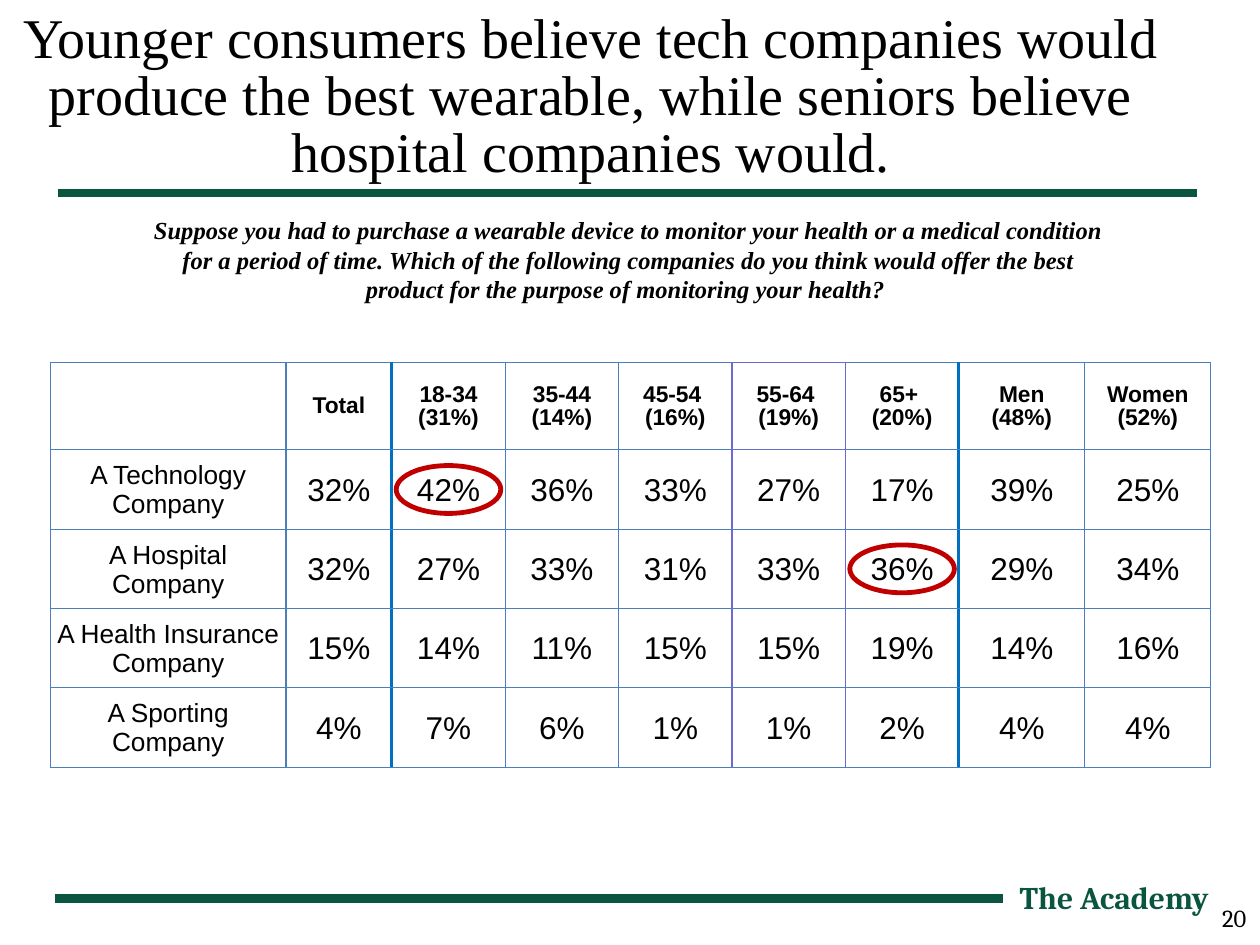
import pptx
import pptx.dml.color
import pptx.enum.shapes
import pptx.enum.text
import pptx.oxml
import pptx.oxml.ns
import pptx.util

Inches = pptx.util.Inches
Pt = pptx.util.Pt
CENTER = pptx.enum.text.PP_ALIGN.CENTER
RIGHT = pptx.enum.text.PP_ALIGN.RIGHT
GREEN, BLACK, RED = "0A5540", "000000", "C00000"
GRID_BLUE, DIVIDER_BLUE, PURPLE = "4B7EBC", "0070C0", "6B6BCF"


def color(value):
    return pptx.dml.color.RGBColor.from_string(value)


def format_text(text_frame, font_name, size, align, text_color=BLACK, bold=False, italic=False, spacing=1.0):
    text_frame.word_wrap = True
    for paragraph in text_frame.paragraphs:
        paragraph.alignment = align
        paragraph.line_spacing = spacing
        paragraph.space_before = Pt(0)
        font = paragraph.font
        font.name, font.size, font.bold, font.italic = font_name, Pt(size), bold, italic
        font.color.rgb = color(text_color)


presentation = pptx.Presentation()
presentation.slide_width = Inches(10)
presentation.slide_height = Inches(7.5)
slide = presentation.slides.add_slide(presentation.slide_layouts[5])
slide.background.fill.solid()
slide.background.fill.fore_color.rgb = color("FFFFFF")

title = slide.shapes.title
title.left, title.top, title.width, title.height = map(Inches, (0, 0.05, 9.38, 0.56))
title.text_frame.text = (
    "Younger consumers believe tech companies would produce the best wearable, "
    "while seniors believe hospital companies would."
)
title.text_frame.auto_size = pptx.enum.text.MSO_AUTO_SIZE.NONE
title.text_frame.vertical_anchor = pptx.enum.text.MSO_ANCHOR.TOP
format_text(title.text_frame, "Times New Roman", 32, CENTER, spacing=0.85)

question = (
    "Suppose you had to purchase a wearable device to monitor your health or a medical condition "
    "for a period of time. Which of the following companies do you think would offer the best "
    "product for the purpose of monitoring your health? "
)
text_boxes = [
    ((8.99, 7.12, 1, 0.34), "20", ("Cambria", 14, RIGHT)),
    ((7.87, 6.92, 1.82, 0.4), "The Academy", ("Cambria", 18, RIGHT, GREEN, True)),
    ((1.11, 1.66, 7.76, 0.81), question, ("Times New Roman", 14, CENTER, BLACK, True, True)),
]
for place, text, style in text_boxes:
    text_box = slide.shapes.add_textbox(*map(Inches, place))
    text_box.text_frame.text = text
    format_text(text_box.text_frame, *style)

for start, end, height, weight in [(0.46, 9.5, 1.53, 4.5), (0.44, 7.96, 7.13, 5)]:
    rule = slide.shapes.add_connector(
        pptx.enum.shapes.MSO_CONNECTOR.STRAIGHT, Inches(start), Inches(height), Inches(end), Inches(height)
    )
    rule.line.color.rgb = color(GREEN)
    rule.line.width = Pt(weight)
    rule._element.spPr.append(pptx.oxml.parse_xml(f'<a:effectLst {pptx.oxml.ns.nsdecls("a")}/>'))

rows = [
    ["", "Total", "18-34 (31%)", "35-44 (14%)", "45-54 \n(16%)", "55-64 \n(19%)", "65+ \n(20%)",
     "Men\n(48%)", "Women\n(52%)"],
    ["A Technology Company", "32%", "42%", "36%", "33%", "27%", "17%", "39%", "25%"],
    ["A Hospital Company", "32%", "27%", "33%", "31%", "33%", "36%", "29%", "34%"],
    ["A Health Insurance Company", "15%", "14%", "11%", "15%", "15%", "19%", "14%", "16%"],
    ["A Sporting Company", "4%", "7%", "6%", "1%", "1%", "2%", "4%", "4%"],
]
column_widths = [1.87, 0.84] + [0.9] * 5 + [1, 1]
row_heights = [0.69] + [0.63] * 4
table_left, table_top = 0.4, 2.88
table = slide.shapes.add_table(
    len(rows), len(column_widths), Inches(table_left), Inches(table_top),
    Inches(sum(column_widths)), Inches(sum(row_heights))
).table
table.first_row = table.horz_banding = False
for column, width in zip(table.columns, column_widths):
    column.width = Inches(width)
for row, height in zip(table.rows, row_heights):
    row.height = Inches(height)

vertical_edges = {2: (DIVIDER_BLUE, 2.25), 5: (PURPLE, 0.75), 6: (PURPLE, 0.75), 7: (DIVIDER_BLUE, 2.25)}
horizontal_edges = {(0, 5): (PURPLE, 0.75), (1, 5): (PURPLE, 0.75)}
plain_edge = (GRID_BLUE, 0.75)
for row_index, values in enumerate(rows):
    for column_index, value in enumerate(values):
        cell = table.cell(row_index, column_index)
        cell.text_frame.text = value
        cell.vertical_anchor = pptx.enum.text.MSO_ANCHOR.MIDDLE
        cell.margin_left = cell.margin_right = cell.margin_top = Inches(0.01)
        cell.margin_bottom = 0
        header = row_index == 0
        size = 13 if header else 15 if column_index == 0 else 18
        format_text(cell.text_frame, "Arial", size, CENTER, bold=header, spacing=0.9 if header else 1.0)
        edges = {
            "lnL": vertical_edges.get(column_index, plain_edge),
            "lnR": vertical_edges.get(column_index + 1, plain_edge),
            "lnT": horizontal_edges.get((row_index, column_index), plain_edge),
            "lnB": horizontal_edges.get((row_index + 1, column_index), plain_edge),
        }
        properties = cell._tc.get_or_add_tcPr()
        for tag, (edge_color, weight) in edges.items():
            properties.append(pptx.oxml.parse_xml(
                f'<a:{tag} {pptx.oxml.ns.nsdecls("a")} w="{Pt(weight)}">'
                f'<a:solidFill><a:srgbClr val="{edge_color}"/></a:solidFill></a:{tag}>'
            ))
        cell.fill.background()

oval_width, oval_height = 0.83, 0.38
for row_index, column_index in [(1, 2), (2, 6)]:
    center_x = table_left + sum(column_widths[:column_index]) + column_widths[column_index] / 2
    center_y = table_top + sum(row_heights[:row_index]) + row_heights[row_index] / 2
    highlight = slide.shapes.add_shape(
        pptx.enum.shapes.MSO_SHAPE.OVAL, Inches(center_x - oval_width / 2), Inches(center_y - oval_height / 2),
        Inches(oval_width), Inches(oval_height)
    )
    highlight.shadow.inherit = False
    highlight.fill.background()
    highlight.line.color.rgb = color(RED)
    highlight.line.width = Pt(2.75)

presentation.save("out.pptx")
